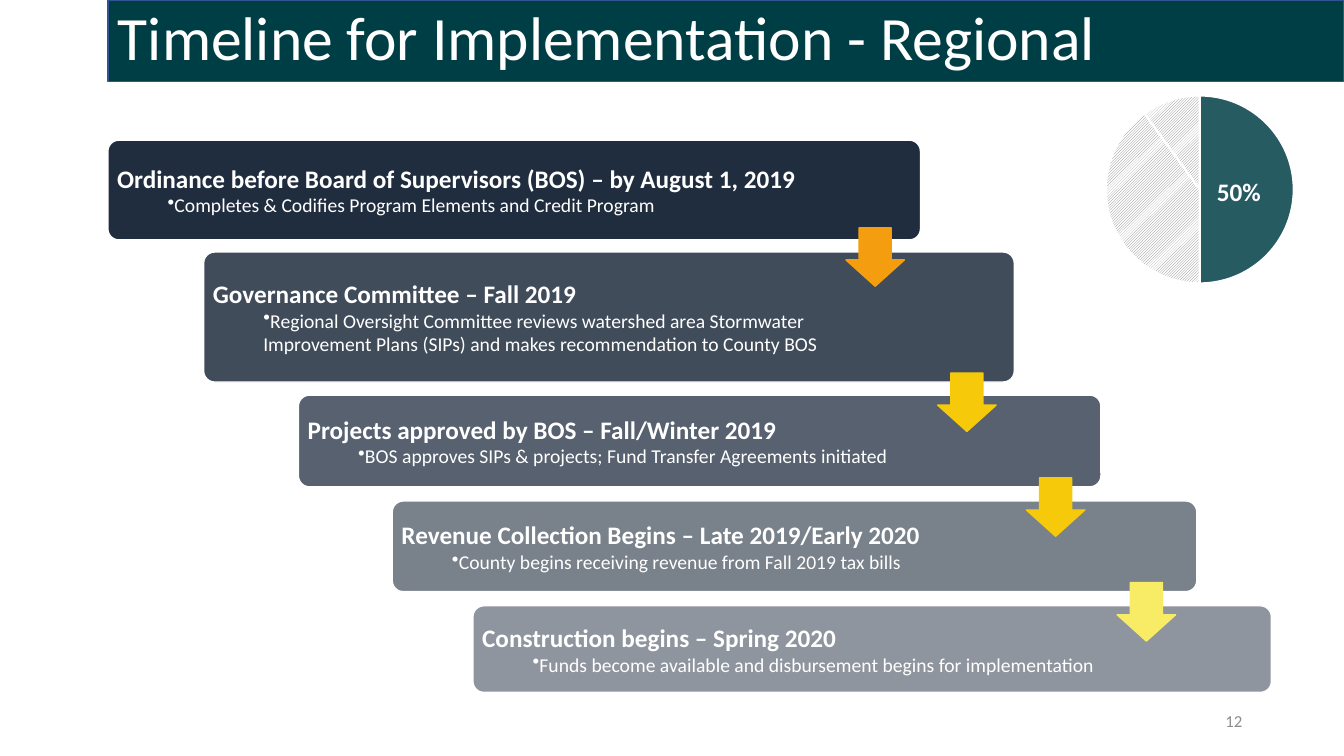
from dataclasses import dataclass
from pptx import Presentation
from pptx.chart.data import CategoryChartData as ChartData
from pptx.dml.color import RGBColor as RGB
from pptx.enum.chart import XL_CHART_TYPE as Kind
from pptx.enum.dml import MSO_PATTERN as Pattern
from pptx.enum.shapes import MSO_SHAPE as Shape
from pptx.enum.text import MSO_ANCHOR as Anchor, MSO_AUTO_SIZE as Fit, PP_ALIGN as Align
from pptx.oxml.ns import qn
from pptx.util import Pt
from lxml.etree import SubElement


@dataclass(frozen=True)
class Theme:
    """Colours, type sizes and font of the slide."""
    font: str = "Calibri"
    white: str = "FFFFFF"
    black: str = "000000"
    bar: str = "003E46"
    edge: str = "325491"
    step: str = "202D3F"
    slice: str = "265B62"
    hatch: str = "808080"
    page: str = "8C8C8C"
    title: int = 44
    head: int = 18
    body: int = 14
    note: int = 12
    chart: int = 10


LOOK = Theme()
SCALE = 9144
RADIUS = 11

STEPS = [
    ((107, 139, 806, 99), 100, "Ordinance before Board of Supervisors (BOS) – by August 1, 2019",
     "Completes & Codifies Program Elements and Credit Program"),
    ((202, 250, 804, 129), 85, "Governance Committee – Fall 2019",
     "Regional Oversight Committee reviews watershed area Stormwater "
     "Improvement Plans (SIPs) and makes recommendation to County BOS"),
    ((296, 392, 796, 91), 75, "Projects approved by BOS – Fall/Winter 2019",
     "BOS approves SIPs & projects; Fund Transfer Agreements initiated"),
    ((389, 497, 798, 90), 60, "Revenue Collection Begins – Late 2019/Early 2020",
     "County begins receiving revenue from Fall 2019 tax bills"),
    ((469, 601, 792, 86), 50, "Construction begins – Spring 2020",
     "Funds become available and disbursement begins for implementation"),
]
ARROWS = [(839, 226, "F49E0F"), (930, 370, "F6CA0A"), (1018, 474, "F6CA0A"), (1108, 578, "F8EC66")]


def px(*sizes):
    """Turn px lengths into EMU."""
    return [size * SCALE for size in sizes]


def paint(shape, fill, line):
    """Set a solid fill and a one-point line."""
    shape.shadow.inherit = False
    shape.fill.solid()
    shape.fill.fore_color.rgb = RGB.from_string(fill)
    shape.line.color.rgb = RGB.from_string(line)
    shape.line.width = Pt(1)


def fade(shape, share):
    """Make the fill of a shape partly transparent."""
    tint = shape._element.spPr.find(qn("a:solidFill"))[0]
    SubElement(tint, qn("a:alpha"), val=str(share * 1000))


def style(font, size, color, bold=False):
    """Set the face, size, colour and weight of a font."""
    font.name = LOOK.font
    font.size = Pt(size)
    font.bold = bold
    font.color.rgb = RGB.from_string(color)


def add_title(slide, text):
    """Fill the title placeholder as the top bar."""
    title = slide.shapes.title
    title.left, title.top, title.width, title.height = px(107, 0, 1226, 81)
    paint(title, LOOK.bar, LOOK.edge)
    frame = title.text_frame
    frame.text = text
    frame.auto_size = Fit.NONE
    frame.vertical_anchor = Anchor.MIDDLE
    para = frame.paragraphs[0]
    para.alignment = Align.LEFT
    para.line_spacing = 0.9
    style(para.font, LOOK.title, LOOK.white)


def add_label(slide, box, text, size, color, bold=False, align=Align.LEFT):
    """Add a one-line text box."""
    frame = slide.shapes.add_textbox(*px(*box)).text_frame
    frame.text = text
    frame.vertical_anchor = Anchor.MIDDLE
    frame.word_wrap = align == Align.RIGHT
    para = frame.paragraphs[0]
    para.alignment = align
    style(para.font, size, color, bold)


def add_step(slide, box, share, head, body):
    """Add a rounded step with a heading and a bullet."""
    step = slide.shapes.add_shape(Shape.ROUNDED_RECTANGLE, *px(*box))
    step.adjustments[0] = RADIUS / box[3]
    paint(step, LOOK.step, LOOK.white)
    if share < 100:
        fade(step, share)
    frame = step.text_frame
    frame.word_wrap = True
    frame.vertical_anchor = Anchor.MIDDLE
    frame.margin_left, frame.margin_top, frame.margin_right, frame.margin_bottom = px(6, 6, 117, 6)
    frame.text = head
    first, item = frame.paragraphs[0], frame.add_paragraph()
    first.alignment = item.alignment = Align.LEFT
    style(first.font, LOOK.head, LOOK.white, True)
    item.text = body
    item.level = 1
    props = item._p.get_or_add_pPr()
    props.set("marL", str(px(50)[0]))
    props.set("indent", "0")
    SubElement(props, qn("a:buChar"), char="•")
    style(item.font, LOOK.body, LOOK.white)


def add_arrow(slide, left, top, color):
    """Add a down arrow between two steps."""
    arrow = slide.shapes.add_shape(Shape.DOWN_ARROW, *px(left, top, 58, 58))
    arrow.adjustments[0] = 0.55
    arrow.adjustments[1] = 0.45
    paint(arrow, color, color)


def add_pie(slide):
    """Add the pie with one solid and two hatched slices."""
    data = ChartData()
    data.categories = ["1", "2", "3"]
    data.add_series("Series 1", (50, 40, 10))
    chart = slide.shapes.add_chart(Kind.PIE, *px(1028, 81, 324, 214), data).chart
    chart.has_legend = chart.has_title = False
    style(chart.font, LOOK.chart, LOOK.black)
    plot = chart.plots[0]
    plot.vary_by_categories = True
    for index in range(3):
        form = plot.series[0].points[index].format
        form.line.color.rgb = RGB.from_string(LOOK.white)
        form.line.width = Pt(1.5)
        fill = form.fill
        if index == 0:
            fill.solid()
            fill.fore_color.rgb = RGB.from_string(LOOK.slice)
        else:
            fill.patterned()
            fill.pattern = Pattern.DARK_UPWARD_DIAGONAL
            fill.fore_color.rgb = RGB.from_string(LOOK.hatch)
            fill.back_color.rgb = RGB.from_string(LOOK.white)


def main():
    """Build and save the slide."""
    deck = Presentation()
    deck.slide_width, deck.slide_height = px(1333, 750)
    slide = deck.slides.add_slide(deck.slide_layouts[5])
    add_title(slide, "Timeline for Implementation - Regional")
    add_label(slide, (942, 695, 300, 40), "12", LOOK.note, LOOK.page, align=Align.RIGHT)
    add_pie(slide)
    add_label(slide, (1197, 170, 64, 40), "50%", LOOK.head, LOOK.white, True)
    for step in STEPS:
        add_step(slide, *step)
    for arrow in ARROWS:
        add_arrow(slide, *arrow)
    deck.save("out.pptx")


if __name__ == "__main__":
    main()
